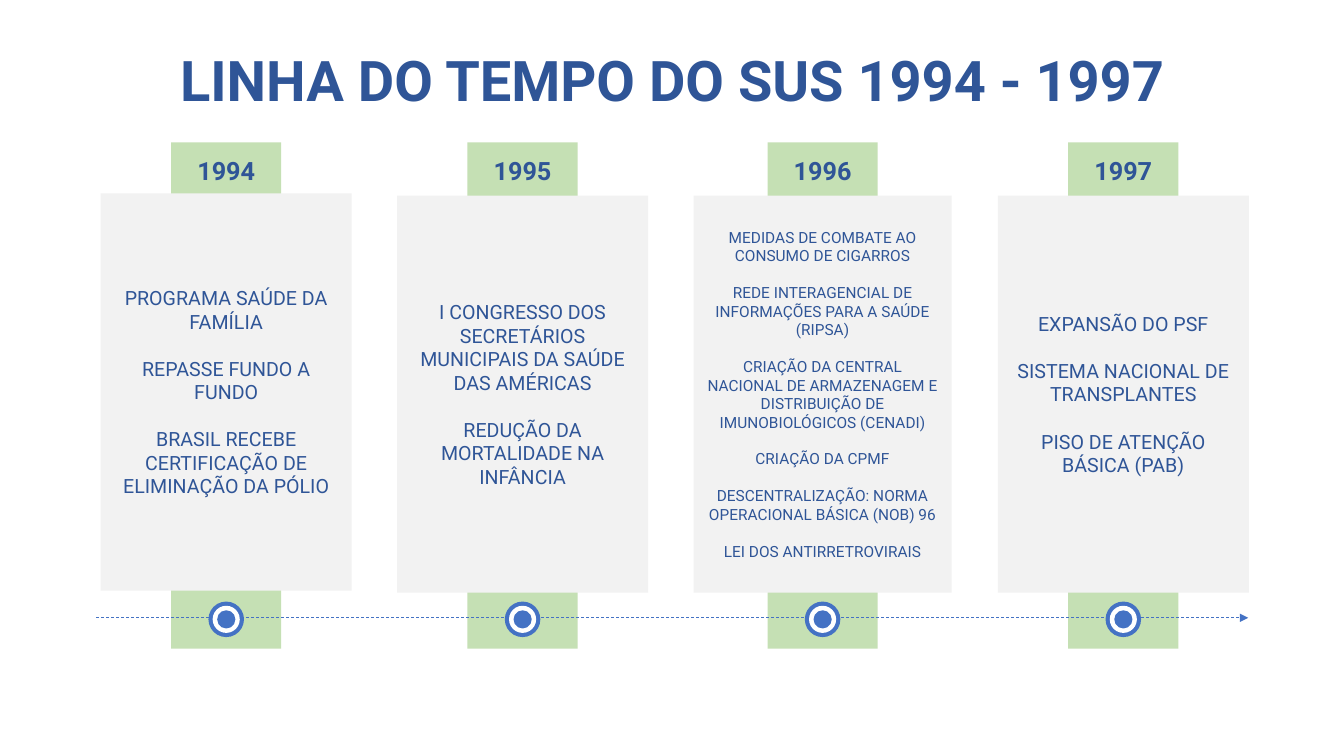
from lxml import etree
from pptx import Presentation
from pptx.dml.color import RGBColor
from pptx.enum import dml, shapes, text
from pptx.oxml import ns
from pptx.util import Pt

COLORS = {"navy": "2F5597", "blue": "4472C4", "green": "C5E0B4",
          "grey": "F2F2F2", "white": "FFFFFF"}
FONT = "Roboto"

# Year, centre, card top, card width, text size, events
MILESTONES = [
    ("1994", 161.6, 138.2, 179.3, 14, [
        "PROGRAMA SAÚDE DA FAMÍLIA",
        "REPASSE FUNDO A FUNDO",
        "BRASIL RECEBE CERTIFICAÇÃO DE ELIMINAÇÃO DA PÓLIO"]),
    ("1995", 373.3, 139.7, 179.3, 14, [
        "I CONGRESSO DOS SECRETÁRIOS MUNICIPAIS DA SAÚDE DAS AMÉRICAS",
        "REDUÇÃO DA MORTALIDADE NA INFÂNCIA"]),
    ("1996", 587.6, 139.7, 184.3, 11, [
        "MEDIDAS DE COMBATE AO CONSUMO DE CIGARROS",
        "REDE INTERAGENCIAL DE INFORMAÇÕES PARA A SAÚDE (RIPSA)",
        "CRIAÇÃO DA CENTRAL NACIONAL DE ARMAZENAGEM E DISTRIBUIÇÃO DE "
        "IMUNOBIOLÓGICOS (CENADI)",
        "CRIAÇÃO DA CPMF",
        "DESCENTRALIZAÇÃO: NORMA OPERACIONAL BÁSICA (NOB) 96",
        "LEI DOS ANTIRRETROVIRAIS"]),
    ("1997", 802.4, 139.7, 179.3, 14, [
        "EXPANSÃO DO PSF",
        "SISTEMA NACIONAL DE TRANSPLANTES",
        "PISO DE ATENÇÃO BÁSICA (PAB)"]),
]


def add_filled(parent, kind, center, top, width, height, color):
    shape = parent.shapes.add_shape(
        kind, Pt(center - width / 2), Pt(top), Pt(width), Pt(height))
    shape.shadow.inherit = False
    shape.fill.solid()
    shape.fill.fore_color.rgb = RGBColor.from_string(COLORS[color])
    shape.line.fill.background()
    return shape


def write(shape, lines, size, bold=False, anchor=text.MSO_ANCHOR.MIDDLE):
    frame = shape.text_frame
    frame.word_wrap = True
    frame.vertical_anchor = anchor
    for i, line in enumerate(lines):
        paragraph = frame.add_paragraph() if i else frame.paragraphs[0]
        paragraph.alignment = text.PP_ALIGN.CENTER
        if i:
            paragraph.space_before = Pt(round(1.2 * size, 1))
        run = paragraph.add_run()
        run.text = line
        run.font.name = FONT
        run.font.size = Pt(size)
        run.font.bold = bold
        run.font.color.rgb = RGBColor.from_string(COLORS["navy"])
    return frame


prs = Presentation()
prs.slide_width, prs.slide_height = Pt(960), Pt(540)
slide = prs.slides.add_slide(prs.slide_layouts[6])

# Title
title = slide.shapes.add_textbox(Pt(66), Pt(28.8), Pt(828), Pt(62))
write(title, ["LINHA DO TEMPO DO SUS 1994 - 1997"], 40, True).paragraphs[0].line_spacing = 0.9

# Green bands, event cards and years
for year, center, top, width, size, events in MILESTONES:
    add_filled(slide, shapes.MSO_SHAPE.RECTANGLE, center, 101.7, 78.7, 361.7, "green")
    card = add_filled(slide, shapes.MSO_SHAPE.RECTANGLE, center, top, width, 283.7, "grey")
    write(card, events, size)
    year_label = slide.shapes.add_textbox(Pt(center - 39.35), Pt(107.3), Pt(78.7), Pt(29))
    write(year_label, [year], 18, True, text.MSO_ANCHOR.TOP)

# Dashed time axis
axis = slide.shapes.add_connector(
    shapes.MSO_CONNECTOR.STRAIGHT, Pt(68.6), Pt(441.3), Pt(891.6), Pt(441.3))
axis.line.color.rgb = RGBColor.from_string(COLORS["blue"])
axis.line.width = Pt(0.5)
axis.line.dash_style = dml.MSO_LINE.DASH
etree.SubElement(axis.line._get_or_add_ln(), ns.qn("a:tailEnd"), type="triangle")
etree.SubElement(axis._element.spPr, ns.qn("a:effectLst"))

# Ringed markers on the axis
for year, center, *_ in MILESTONES:
    marker = slide.shapes.add_group_shape()
    for diameter, color in [(25.4, "blue"), (19.4, "white"), (13, "blue")]:
        add_filled(marker, shapes.MSO_SHAPE.OVAL, center, 442.4 - diameter / 2,
                   diameter, diameter, color)

prs.save("out.pptx")
